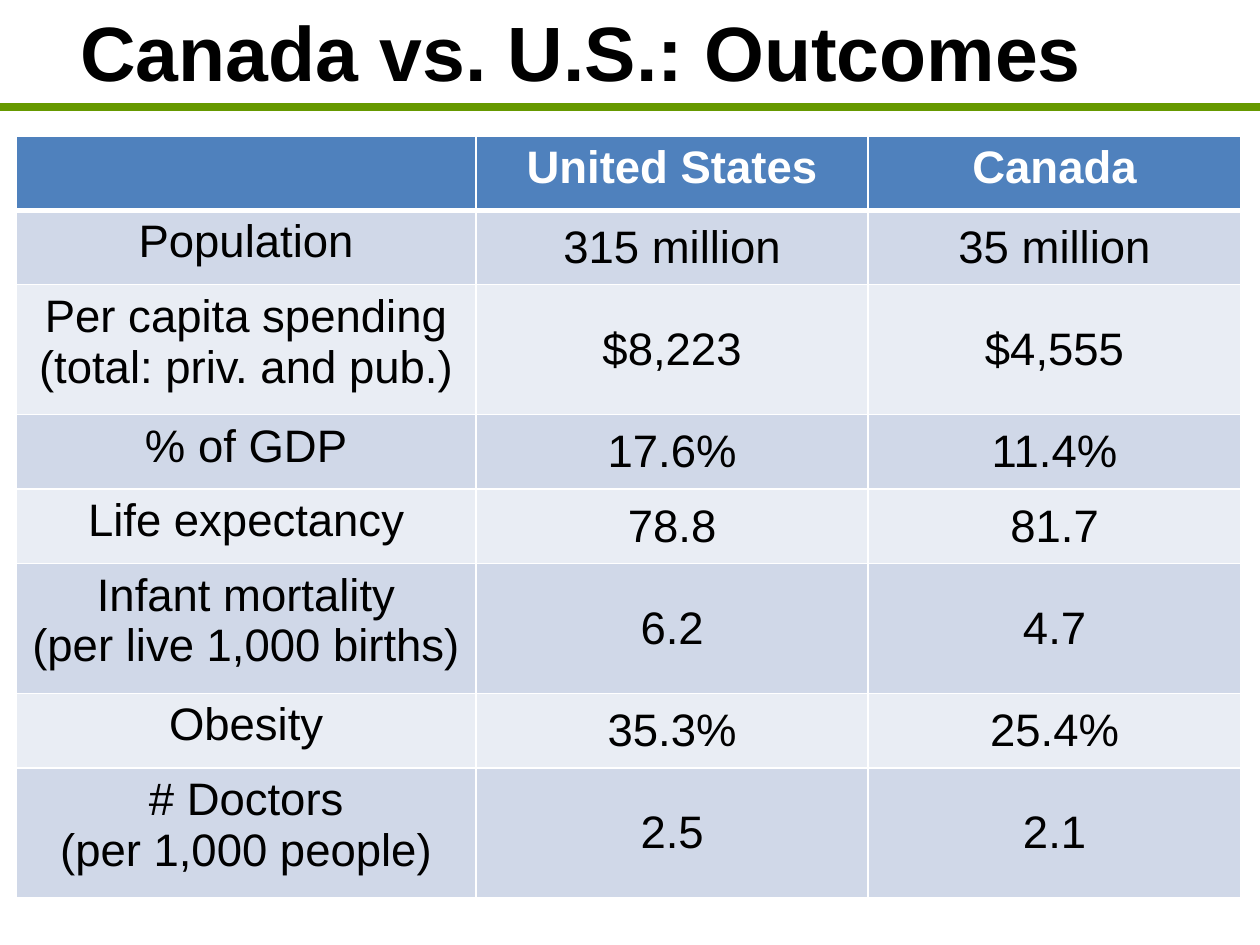
import pptx
import pptx.dml.color
import pptx.enum.shapes
import pptx.enum.text
import pptx.oxml
import pptx.oxml.ns
import pptx.util
from lxml import etree

Cm, Pt = pptx.util.Cm, pptx.util.Pt
RGBColor = pptx.dml.color.RGBColor
ALIGN = pptx.enum.text.PP_ALIGN
ANCHOR = pptx.enum.text.MSO_ANCHOR

# Content
TITLE = "Canada vs. U.S.: Outcomes"
ROWS = [
    ("", "United States", "Canada"),
    ("Population", "315 million", "35 million"),
    ("Per capita spending\n(total: priv. and pub.)", "$8,223", "$4,555"),
    ("% of GDP", "17.6%", "11.4%"),
    ("Life expectancy", "78.8", "81.7"),
    ("Infant mortality\n(per live 1,000 births)", "6.2", "4.7"),
    ("Obesity", "35.3%", "25.4%"),
    ("# Doctors\n(per 1,000 people)", "2.5", "2.1"),
]

# Format
BLACK = RGBColor(0x00, 0x00, 0x00)
WHITE = RGBColor(0xFF, 0xFF, 0xFF)
GREEN = RGBColor(0x66, 0x99, 0x00)
HEADER_BLUE = RGBColor(0x4F, 0x81, 0xBD)
BANDS = (RGBColor(0xE9, 0xED, 0xF4), RGBColor(0xD0, 0xD8, 0xE8))
TITLE_FONT = {"name": "Arial", "size": Pt(44), "bold": True}
HEADER_FONT = {"name": "Arial", "size": Pt(26), "bold": True}
BODY_FONT = {"name": "Arial", "size": Pt(26), "bold": False}
COLUMN_WIDTHS = (9.27, 7.9, 7.52)
ROW_HEIGHTS = {1: 1.5, 2: 2.62}  # by number of text lines
THIN, THICK = Pt(1), Pt(3)


def write(frame, text, font, color, align):
    frame.text = text
    for para in frame.paragraphs:
        para.alignment = align
        for span in para.runs:
            for name, value in font.items():
                setattr(span.font, name, value)
            span.font.color.rgb = color


def set_borders(cell, widths):
    properties = cell._tc.get_or_add_tcPr()
    for index, (side, width) in enumerate(widths.items()):
        border = pptx.oxml.parse_xml(
            f'<a:ln{side} xmlns:a="http://schemas.openxmlformats.org/drawingml/2006/main" '
            f'w="{int(width)}"><a:solidFill><a:srgbClr val="{WHITE}"/></a:solidFill></a:ln{side}>')
        properties.insert(index, border)


deck = pptx.Presentation()
deck.slide_width, deck.slide_height = Cm(25.4), Cm(19.05)
page = deck.slides.add_slide(deck.slide_layouts[6])

# Rule under the title
rule = page.shapes.add_connector(
    pptx.enum.shapes.MSO_CONNECTOR.STRAIGHT, 0, Cm(2.16), deck.slide_width, Cm(2.16))
rule.line.color.rgb = GREEN
rule.line.width = Pt(4.5)
etree.SubElement(rule._element.spPr, pptx.oxml.ns.qn("a:effectLst"))

# Title
title = page.shapes.add_textbox(Cm(1.37), Cm(-0.05), Cm(22.86), Cm(2.13))
title.text_frame.word_wrap = True
title.text_frame.vertical_anchor = ANCHOR.MIDDLE
write(title.text_frame, TITLE, TITLE_FONT, BLACK, ALIGN.LEFT)

# Comparison table
heights = [ROW_HEIGHTS[row[0].count("\n") + 1] for row in ROWS]
table = page.shapes.add_table(
    len(ROWS), len(COLUMN_WIDTHS), Cm(0.33), Cm(2.74),
    Cm(sum(COLUMN_WIDTHS)), Cm(sum(heights))).table
for column, width in zip(table.columns, COLUMN_WIDTHS):
    column.width = Cm(width)

for r, (values, height) in enumerate(zip(ROWS, heights)):
    table.rows[r].height = Cm(height)
    header = r == 0
    for c, value in enumerate(values):
        cell = table.cell(r, c)
        cell.fill.solid()
        cell.fill.fore_color.rgb = HEADER_BLUE if header else BANDS[r % 2]
        cell.vertical_anchor = ANCHOR.TOP if header or c == 0 else ANCHOR.MIDDLE
        write(cell.text_frame, value, HEADER_FONT if header else BODY_FONT,
              WHITE if header else BLACK, ALIGN.CENTER)
        set_borders(cell, {"L": THIN, "R": THIN,
                           "T": THICK if r == 1 else THIN,
                           "B": THICK if header else THIN})

deck.save("out.pptx")
